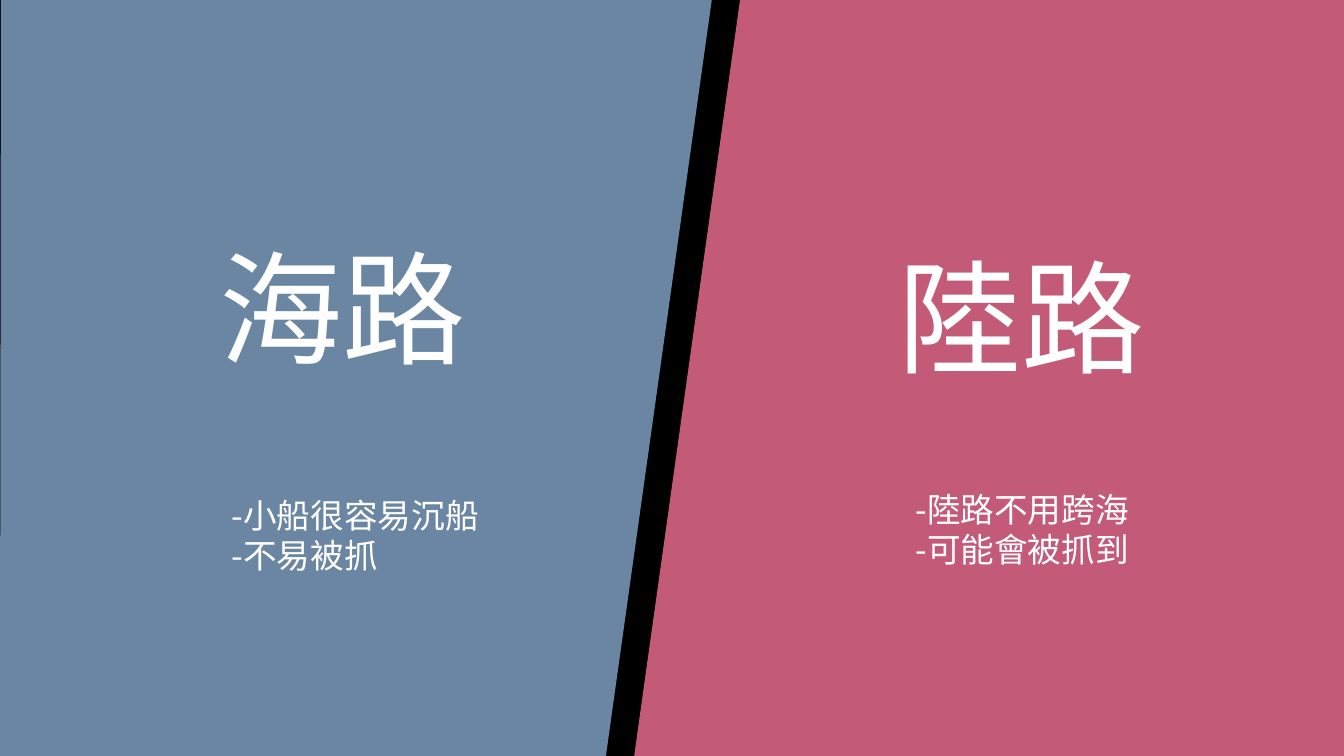
from lxml.etree import SubElement
from pptx import Presentation
from pptx.dml.color import RGBColor
from pptx.enum.text import MSO_AUTO_SIZE, PP_ALIGN
from pptx.oxml.ns import qn
from pptx.util import Inches, Pt

W, H = 13.33, 7.5
BLACK, WHITE = "000000", "FFFFFF"
TOP_CUT, BOTTOM_CUT, BAND = 7.06, 6.01, 0.28
TITLE = {"size": Pt(88), "name": "Calibri"}
BODY = {"size": Pt(24), "name": "Noto Sans CJK JP"}

ROUTES = [
    {
        "color": "6B86A3",
        "outline": [(0.01, 0), (TOP_CUT, 0), (BOTTOM_CUT, H), (0, H)],
        "title": ("海路", (0.56, 2.26, 5.68, 1.58)),
        "points": (["-小船很容易沉船", "-不易被抓"], (2.2, 4.86, 3.73, 0.91)),
    },
    {
        "color": "C35A78",
        "outline": [(TOP_CUT + BAND, 0), (W, 0), (W, H), (BOTTOM_CUT + BAND, H)],
        "title": ("陸路", (7.06, 2.34, 6.15, 1.58)),
        "points": (["-陸路不用跨海", "-可能會被抓到"], (8.98, 4.8, 3.65, 0.91)),
    },
]


def rgb(color):
    return RGBColor.from_string(color)


def add_panel(s, outline, color):
    points = [(Inches(x), Inches(y)) for x, y in outline]
    builder = s.shapes.build_freeform(*points[0])
    builder.add_line_segments(points[1:], close=True)
    sp = builder.convert_to_shape()
    sp.shadow.inherit = False
    sp.fill.solid()
    sp.fill.fore_color.rgb = rgb(color)
    sp.line.fill.background()


def add_text(s, lines, box, style, align):
    tf = s.shapes.add_textbox(*map(Inches, box)).text_frame
    tf.word_wrap = True
    tf.auto_size = MSO_AUTO_SIZE.SHAPE_TO_FIT_TEXT
    tf.text = "\n".join(lines)
    for p in tf.paragraphs:
        p.alignment = align
        for r in p.runs:
            for key, value in style.items():
                setattr(r.font, key, value)
            r.font.color.rgb = rgb(WHITE)
            if style is BODY:
                SubElement(r.font._element, qn("a:ea"), typeface=style["name"])


def main():
    prs = Presentation()
    prs.slide_width, prs.slide_height = Inches(W), Inches(H)
    s = prs.slides.add_slide(prs.slide_layouts[6])
    s.background.fill.solid()
    s.background.fill.fore_color.rgb = rgb(BLACK)
    for route in ROUTES:
        add_panel(s, route["outline"], route["color"])
    for route in ROUTES:
        title, box = route["title"]
        add_text(s, [title], box, TITLE, PP_ALIGN.CENTER)
    for route in ROUTES:
        add_text(s, *route["points"], BODY, PP_ALIGN.LEFT)
    prs.save("out.pptx")


if __name__ == "__main__":
    main()
